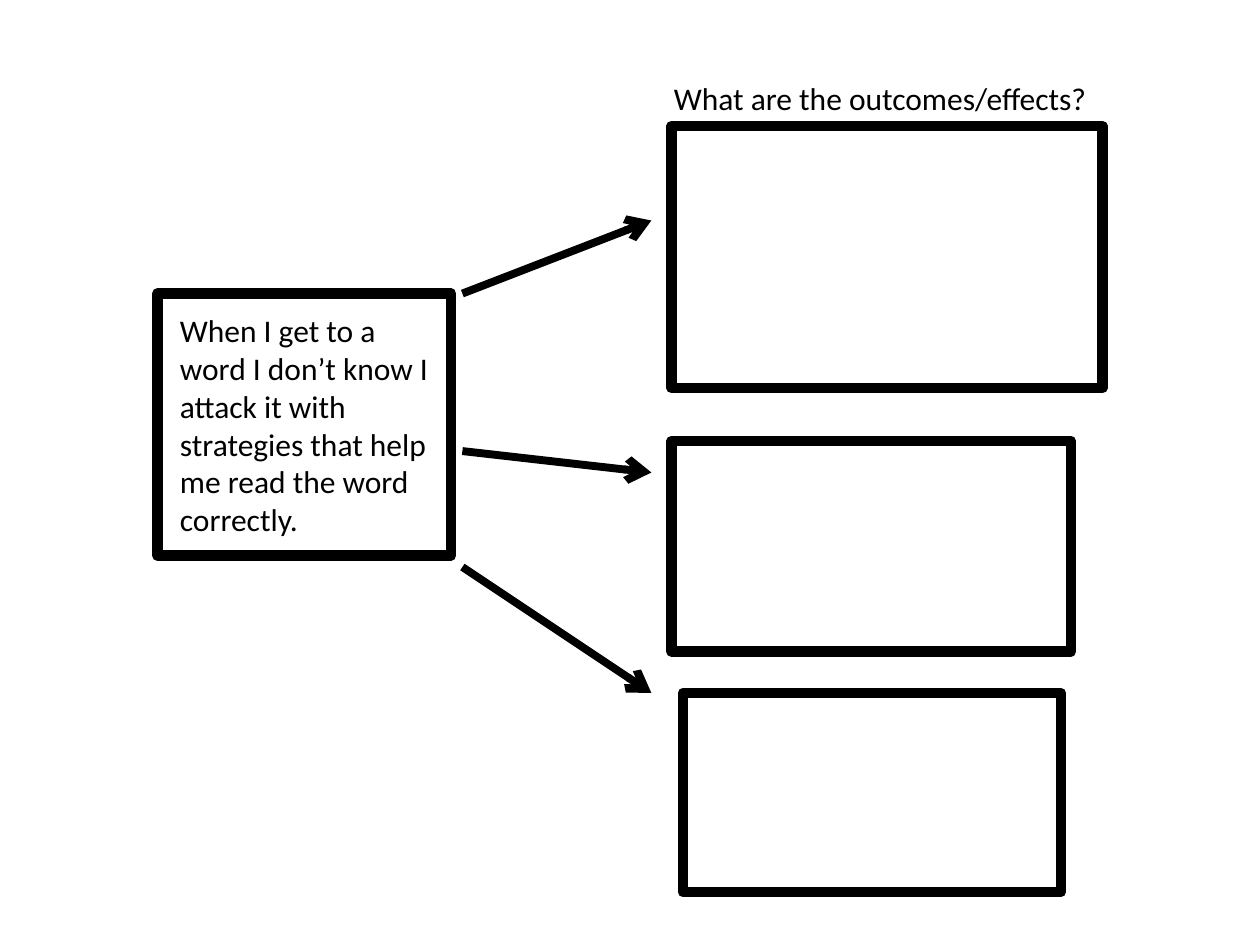
from typing import NamedTuple

from lxml import etree
from pptx import Presentation
from pptx.dml.color import RGBColor
from pptx.enum.shapes import MSO_CONNECTOR, MSO_SHAPE
from pptx.enum.text import MSO_AUTO_SIZE
from pptx.oxml.ns import qn
from pptx.slide import Slide
from pptx.util import Inches, Pt

RECTANGLE = MSO_SHAPE.RECTANGLE
STRAIGHT = MSO_CONNECTOR.STRAIGHT
FIT_SHAPE = MSO_AUTO_SIZE.SHAPE_TO_FIT_TEXT

BLACK = RGBColor(0x00, 0x00, 0x00)
FONT = "Calibri"
BLANK_LAYOUT = 6


class Box(NamedTuple):
    """Position and size in inches."""
    left: float
    top: float
    width: float
    height: float


class Arrow(NamedTuple):
    """Heights in inches at which an arrow leaves the cause and reaches an effect."""
    start_y: float
    end_y: float


class Label(NamedTuple):
    text: str
    box: Box
    wrap: bool


CAUSE = Box(1.25, 2.33, 2.33, 2.08)
EFFECTS = [
    Box(5.33, 1, 3.42, 2.08),
    Box(5.33, 3.5, 3.17, 1.67),
    Box(5.42, 5.5, 3, 1.58),
]
ARROW_LEFT, ARROW_RIGHT = 3.67, 5.17
ARROWS = [Arrow(2.33, 1.75), Arrow(3.58, 3.75), Arrow(4.5, 5.5)]
LABELS = [
    Label("When I get to a word I don’t know I attack it with strategies "
          "that help me read the word correctly.",
          Box(1.33, 2.42, 2.17, 1.92), True),
    Label("What are the outcomes/effects?", Box(5.25, 0.58, 3.58, 0.4), False),
]


def add_frame(slide: Slide, box: Box) -> None:
    """Draw an unfilled rectangle with a heavy outline."""
    frame = slide.shapes.add_shape(RECTANGLE, *map(Inches, box))
    frame.shadow.inherit = False
    frame.fill.background()
    frame.line.color.rgb = BLACK
    frame.line.width = Pt(6)


def add_arrow(slide: Slide, arrow: Arrow) -> None:
    connector = slide.shapes.add_connector(
        STRAIGHT, Inches(ARROW_LEFT), Inches(arrow.start_y),
        Inches(ARROW_RIGHT), Inches(arrow.end_y))
    connector.line.color.rgb = BLACK
    connector.line.width = Pt(4.5)
    properties = connector._element.spPr
    etree.SubElement(properties.find(qn("a:ln")), qn("a:tailEnd"), type="arrow")
    etree.SubElement(properties, qn("a:effectLst"))


def add_label(slide: Slide, label: Label) -> None:
    text_frame = slide.shapes.add_textbox(*map(Inches, label.box)).text_frame
    text_frame.word_wrap = label.wrap
    text_frame.auto_size = FIT_SHAPE
    text_frame.text = label.text
    font = text_frame.paragraphs[0].runs[0].font
    font.name = FONT
    font.size = Pt(18)
    font.color.rgb = BLACK


def main() -> None:
    presentation = Presentation()
    presentation.slide_width = Inches(10)
    presentation.slide_height = Inches(7.5)
    slide = presentation.slides.add_slide(presentation.slide_layouts[BLANK_LAYOUT])
    for box in [CAUSE, *EFFECTS]:
        add_frame(slide, box)
    for arrow in ARROWS:
        add_arrow(slide, arrow)
    for label in LABELS:
        add_label(slide, label)
    presentation.save("out.pptx")


if __name__ == "__main__":
    main()
